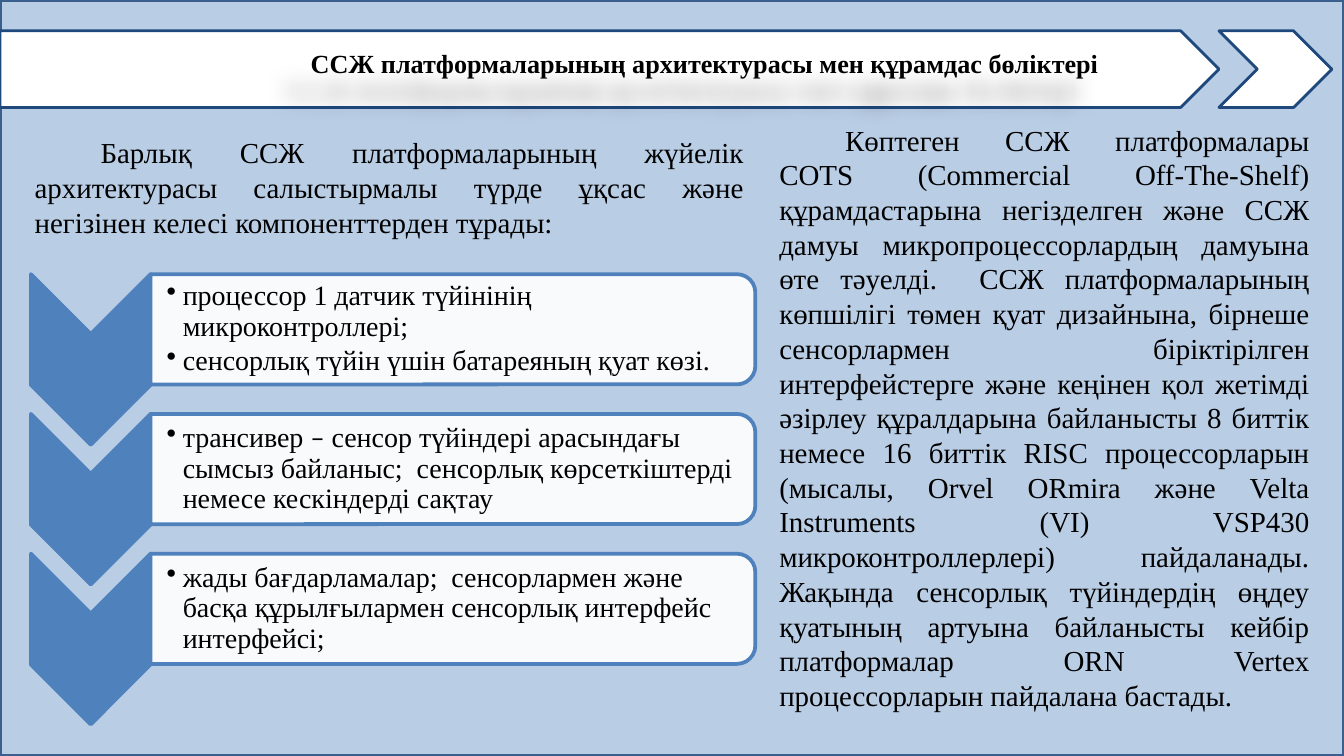
from dataclasses import dataclass

from lxml import etree
from pptx import Presentation
from pptx import util as u
from pptx.dml.color import RGBColor
from pptx.enum import shapes, text
from pptx.oxml.ns import qn

COLORS = {
    "background": "B9CDE5", "frame": "3A5F8C", "navy": "1F497D",
    "blue": "4F81BD", "white": "FFFFFF", "black": "000000",
}
FONT = "Times New Roman"
SLIDE_WIDTH = 10
SLIDE_HEIGHT = SLIDE_WIDTH * 9 / 16
FIRST_LINE = 0.49
HANGING = 0.12
ROW_TOP, ROW_STEP = 2.08, 1.04


@dataclass
class Box:
    left: float
    top: float
    width: float
    height: float

    def lengths(self) -> list:
        return [u.Inches(value) for value in (self.left, self.top, self.width, self.height)]


@dataclass
class Run:
    content: str
    font: str = FONT


# Each component is a list of bullets, each bullet a list of runs
COMPONENTS = [
    [[Run("процессор 1 датчик түйінінің микроконтроллері;")],
     [Run("сенсорлық түйін үшін батареяның қуат көзі.")]],
    [[Run("трансивер "), Run("–", "Calibri"),
      Run(" сенсор түйіндері арасындағы сымсыз байланыс;  сенсорлық көрсеткіштерді "
          "немесе кескіндерді сақтау")]],
    [[Run("жады бағдарламалар;  сенсорлармен және басқа құрылғылармен сенсорлық "
          "интерфейс интерфейсі;")]],
]
TITLE = "ССЖ платформаларының архитектурасы мен құрамдас бөліктері"
INTRO = ("Барлық ССЖ платформаларының жүйелік архитектурасы салыстырмалы түрде ұқсас "
         "және негізінен келесі компоненттерден тұрады:")
DETAILS = (
    "Көптеген ССЖ платформалары COTS (Commercial Off-The-Shelf) құрамдастарына негізделген "
    "және ССЖ дамуы микропроцессорлардың дамуына өте тәуелді.  ССЖ платформаларының көпшілігі "
    "төмен қуат дизайнына, бірнеше сенсорлармен біріктірілген интерфейстерге және кеңінен қол "
    "жетімді әзірлеу құралдарына байланысты 8 биттік немесе 16 биттік RISC процессорларын "
    "(мысалы, Orvel ORmira және Velta Instruments (VI) VSP430 микроконтроллерлері) "
    "пайдаланады. Жақында сенсорлық түйіндердің өңдеу қуатының артуына байланысты кейбір "
    "платформалар ORN Vertex процессорларын пайдалана бастады."
)


def color(name: str) -> RGBColor:
    return RGBColor.from_string(COLORS[name])


def add_preset(slide, kind, box: Box, fill: str, line: str, weight: float, rotation: float = 0):
    shape = slide.shapes.add_shape(kind, *box.lengths())
    shape.shadow.inherit = False
    shape.rotation = rotation
    shape.fill.solid()
    shape.fill.fore_color.rgb = color(fill)
    shape.line.color.rgb = color(line)
    shape.line.width = u.Pt(weight)
    return shape


def add_run(paragraph, run: Run, size: float, bold: bool = False) -> None:
    item = paragraph.add_run()
    item.text = run.content
    item.font.name = run.font
    item.font.size = u.Pt(size)
    item.font.bold = bold
    item.font.color.rgb = color("black")


def set_indent(paragraph, margin: float, indent: float) -> None:
    properties = paragraph._p.get_or_add_pPr()
    properties.set("marL", str(u.Inches(margin)))
    properties.set("indent", str(u.Inches(indent)))


def add_text_box(slide, box: Box, margins: tuple, anchor, grow: bool = True):
    shape = slide.shapes.add_textbox(*box.lengths())
    frame = shape.text_frame
    frame.word_wrap = True
    frame.vertical_anchor = anchor
    frame.auto_size = text.MSO_AUTO_SIZE.SHAPE_TO_FIT_TEXT if grow else text.MSO_AUTO_SIZE.NONE
    (frame.margin_left, frame.margin_top,
     frame.margin_right, frame.margin_bottom) = map(u.Inches, margins)
    return shape


def add_body(slide, box: Box, content: str, size: float, alignment,
             margins: tuple = (0.1, 0.05, 0.1, 0.05),
             anchor=text.MSO_ANCHOR.TOP, bold: bool = False):
    shape = add_text_box(slide, box, margins, anchor)
    paragraph = shape.text_frame.paragraphs[0]
    paragraph.alignment = alignment
    set_indent(paragraph, 0, FIRST_LINE)
    add_run(paragraph, Run(content), size, bold)
    return shape


def add_soft_shadow(shape) -> None:
    effects = etree.SubElement(shape._element.spPr, qn("a:effectLst"))
    shadow = etree.SubElement(effects, qn("a:outerShdw"), blurRad=str(u.Inches(0.16)),
                              dist=str(u.Inches(0.26)), dir="8100000", rotWithShape="0")
    tint = etree.SubElement(shadow, qn("a:srgbClr"), val=COLORS["black"])
    etree.SubElement(tint, qn("a:alpha"), val="35000")


def add_component(slide, top: float, bullets: list) -> None:
    kinds = shapes.MSO_SHAPE
    add_preset(slide, kinds.CHEVRON, Box(0.04, top + 0.15, 1.27, 0.89), "blue", "blue", 2, 90)
    panel = add_preset(slide, kinds.ROUND_2_SAME_RECTANGLE,
                       Box(2.96, top - 1.88, 0.82, 4.5), "white", "blue", 2, 90)
    tint = panel._element.spPr.find(qn("a:solidFill"))[0]
    etree.SubElement(tint, qn("a:alpha"), val="90000")

    frame = add_text_box(slide, Box(1.12, top, 4.46, 0.74), (0.12, 0.01, 0.01, 0.01),
                         text.MSO_ANCHOR.MIDDLE, grow=False).text_frame
    for index, runs in enumerate(bullets):
        paragraph = frame.add_paragraph() if index else frame.paragraphs[0]
        paragraph.line_spacing = 0.9
        paragraph.space_after = u.Pt(2.25)
        set_indent(paragraph, HANGING, -HANGING)
        etree.SubElement(paragraph._p.get_or_add_pPr(), qn("a:buChar"), char="•")
        for run in runs:
            add_run(paragraph, run, 15)


def main() -> None:
    presentation = Presentation()
    presentation.slide_width = u.Inches(SLIDE_WIDTH)
    presentation.slide_height = u.Inches(SLIDE_HEIGHT)
    slide = presentation.slides.add_slide(presentation.slide_layouts[6])
    kinds = shapes.MSO_SHAPE

    # Backdrop and title banner
    add_preset(slide, kinds.RECTANGLE, Box(0, 0, SLIDE_WIDTH, SLIDE_HEIGHT),
               "background", "frame", 2)
    add_preset(slide, kinds.PENTAGON, Box(0, 0.23, 9.07, 0.57), "white", "navy", 1.5)
    title = add_body(slide, Box(0, 0.31, 10, 0.31), TITLE, 14, text.PP_ALIGN.CENTER,
                     margins=(0.07, 0.04, 0.07, 0.04), bold=True)
    add_soft_shadow(title)
    add_preset(slide, kinds.CHEVRON, Box(9.07, 0.23, 0.84, 0.57), "white", "navy", 1.5)

    # Component list
    for index, bullets in enumerate(COMPONENTS):
        add_component(slide, ROW_TOP + index * ROW_STEP, bullets)

    # Introduction and details
    add_body(slide, Box(0.16, 0.95, 5.47, 0.88), INTRO, 15.5, text.PP_ALIGN.JUSTIFY,
             anchor=text.MSO_ANCHOR.MIDDLE)
    add_body(slide, Box(5.7, 0.86, 4.14, 4.54), DETAILS, 15.5, text.PP_ALIGN.JUSTIFY)

    presentation.save("out.pptx")


if __name__ == "__main__":
    main()
